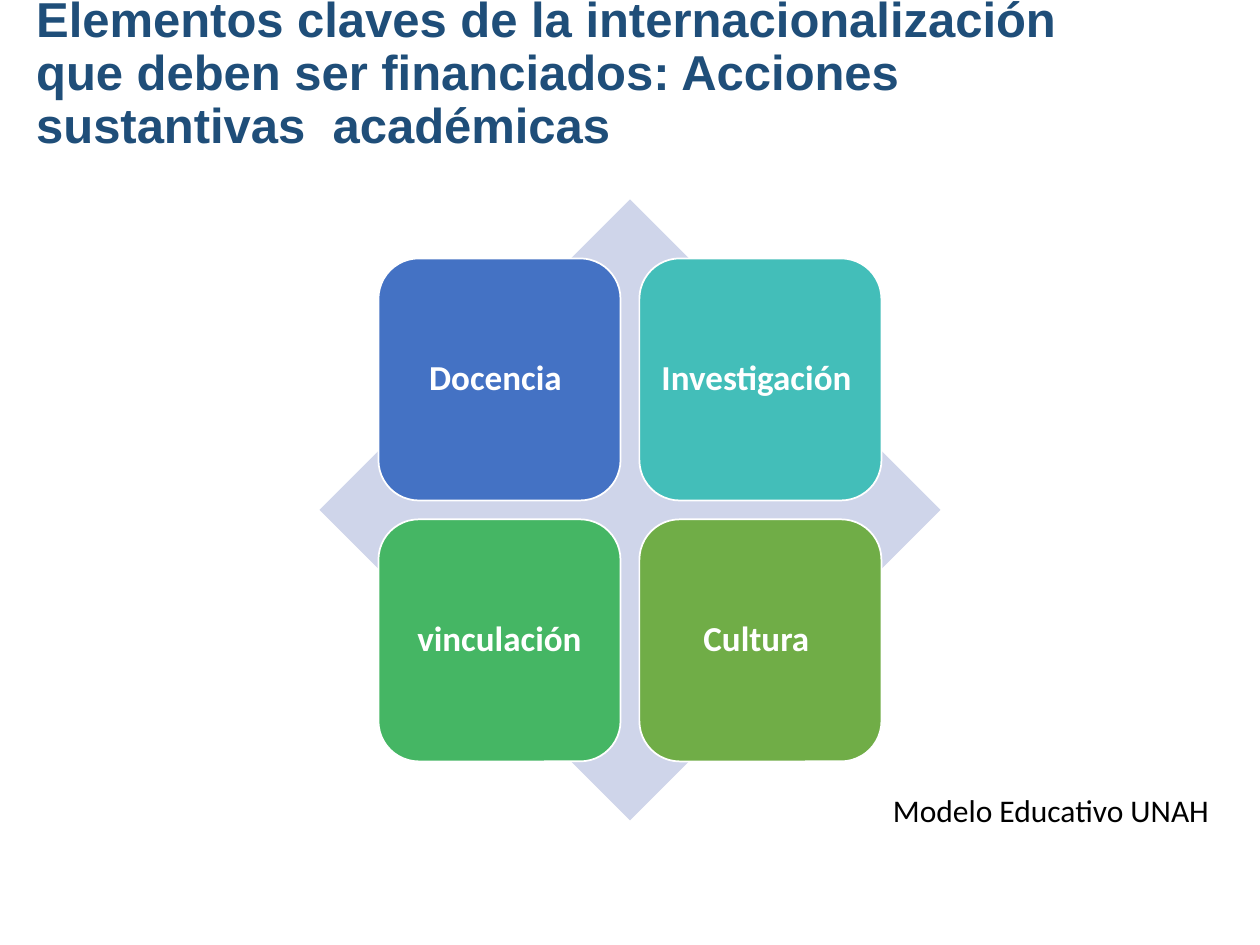
from pptx import Presentation
from pptx.dml.color import RGBColor
from pptx.enum.shapes import MSO_SHAPE as Preset
from pptx.enum.text import MSO_ANCHOR as Anchor, PP_ALIGN as Align
from pptx.util import Cm, Pt

TITLE = ("Elementos claves de la internacionalización que deben ser "
         "financiados: Acciones sustantivas  académicas")
CAPTION = "Modelo Educativo UNAH"
ACTIONS = [
    ("Docencia ", "blue"),
    ("Investigación ", "teal"),
    ("vinculación", "green"),
    ("Cultura ", "olive"),
]
COLORS = {
    "navy": "1F4E79", "lavender": "CFD5EA", "blue": "4472C4", "teal": "43BEB9",
    "green": "45B664", "olive": "70AD47", "white": "FFFFFF", "black": "000000",
}

# Lengths in centimetres
CENTER_X, CENTER_Y = 12.7, 10.28
DIAMOND = 12.52
TILE, GAP = 4.88, 0.38


def color(name):
    return RGBColor.from_string(COLORS[name])


def write(shape, text, size, ink, font="Calibri", bold=False,
          align=Align.LEFT, anchor=Anchor.TOP, spacing=1.0, inset=None):
    frame = shape.text_frame
    frame.word_wrap = True
    frame.vertical_anchor = anchor
    if inset is not None:
        frame.margin_left = frame.margin_right = Cm(inset)
        frame.margin_top = frame.margin_bottom = Cm(inset)
    paragraph = frame.paragraphs[0]
    paragraph.alignment = align
    paragraph.line_spacing = spacing
    run = paragraph.add_run()
    run.text = text
    run.font.name = font
    run.font.size = Pt(size)
    run.font.bold = bold
    run.font.color.rgb = color(ink)


def add_box(slide, left, top, width, height):
    return slide.shapes.add_textbox(Cm(left), Cm(top), Cm(width), Cm(height))


def add_square(slide, preset, left, top, side, fill, line=None):
    """Add a preset shape as wide as it is high."""
    shape = slide.shapes.add_shape(preset, Cm(left), Cm(top), Cm(side), Cm(side))
    shape.shadow.inherit = False
    shape.fill.solid()
    shape.fill.fore_color.rgb = color(fill)
    if line:
        shape.line.color.rgb = color(line)
        shape.line.width = Pt(1)
    else:
        shape.line.fill.background()
    return shape


def main():
    presentation = Presentation()
    presentation.slide_width, presentation.slide_height = Cm(25.4), Cm(19.05)
    slide = presentation.slides.add_slide(presentation.slide_layouts[6])

    write(add_box(slide, 0.48, -0.33, 22.68, 3.68), TITLE, 28, "navy",
          font="Arial", bold=True, anchor=Anchor.MIDDLE, spacing=0.9)

    add_square(slide, Preset.DIAMOND, CENTER_X - DIAMOND / 2,
               CENTER_Y - DIAMOND / 2, DIAMOND, "lavender")

    grid = 2 * TILE + GAP
    for index, (label, fill) in enumerate(ACTIONS):
        row, column = divmod(index, 2)
        tile = add_square(slide, Preset.ROUNDED_RECTANGLE,
                          CENTER_X - grid / 2 + column * (TILE + GAP),
                          CENTER_Y - grid / 2 + row * (TILE + GAP),
                          TILE, fill, line="white")
        write(tile, label, 20, "white", bold=True, align=Align.CENTER,
              anchor=Anchor.MIDDLE, spacing=0.9, inset=0.2)

    write(add_box(slide, 17.75, 15.82, 7.92, 1.02), CAPTION, 18, "black")
    presentation.save("out.pptx")


if __name__ == "__main__":
    main()
